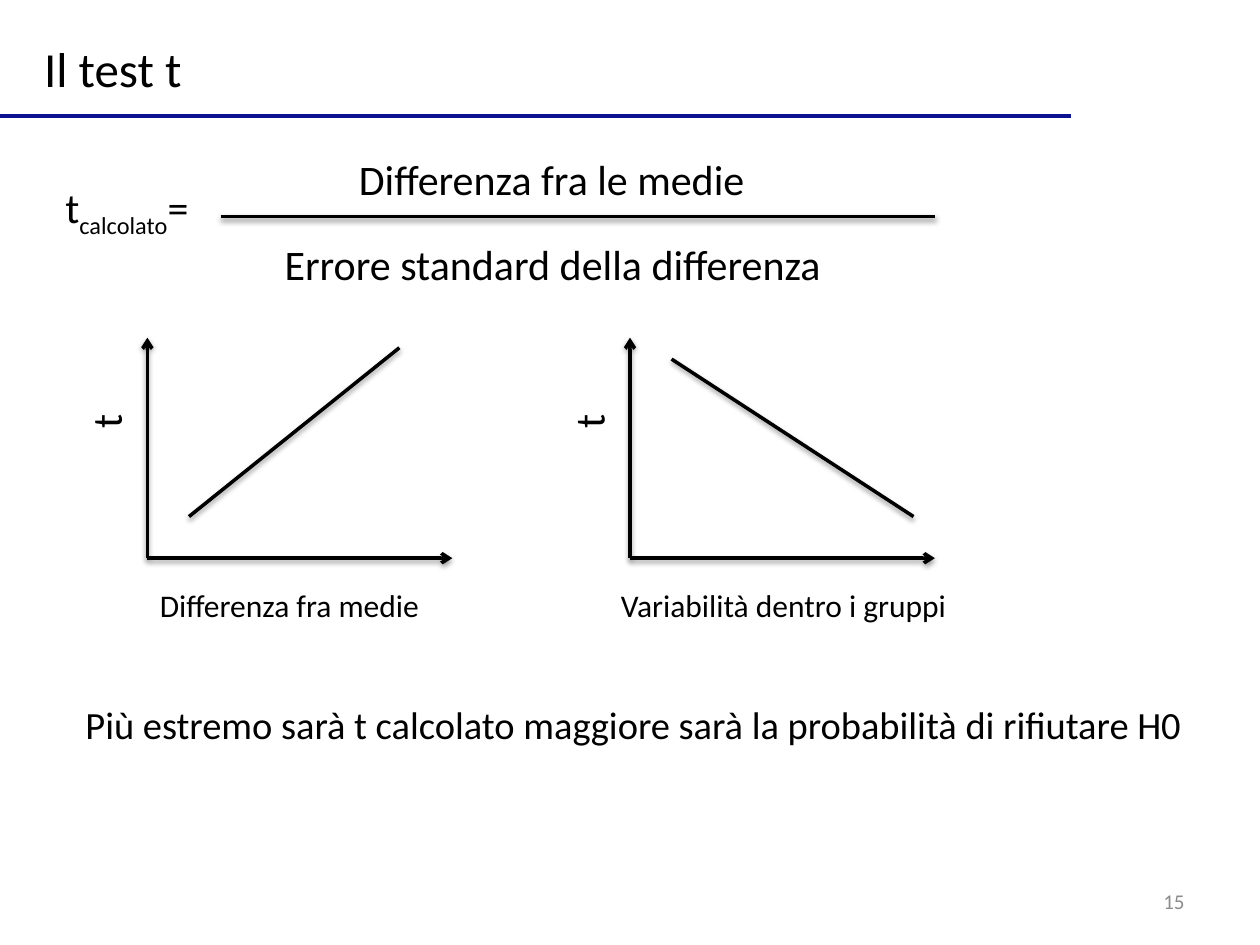
from lxml import etree
from pptx import Presentation
from pptx.dml.color import RGBColor
from pptx.enum import shapes, text
from pptx.oxml import ns
from pptx.util import Inches, Pt

COLORS = {"ink": "000000", "rule": "0C1290", "number": "8C8C8C"}
FONT = "Calibri"


def style_text(shape, size, color="ink", align=text.PP_ALIGN.LEFT, wrap=False):
    frame = shape.text_frame
    frame.word_wrap = wrap
    frame.auto_size = text.MSO_AUTO_SIZE.NONE
    frame.vertical_anchor = text.MSO_ANCHOR.MIDDLE
    paragraph = frame.paragraphs[0]
    paragraph.alignment = align
    paragraph.font.name = FONT
    paragraph.font.size = Pt(size)
    paragraph.font.color.rgb = RGBColor.from_string(COLORS[color])


def add_label(slide, box, words, size, **style):
    shape = slide.shapes.add_textbox(*map(Inches, box))
    shape.text_frame.text = words
    style_text(shape, size, **style)
    return shape


def add_line(slide, start, end, color="ink", arrow=False, shadow=True):
    line = slide.shapes.add_connector(
        shapes.MSO_CONNECTOR.STRAIGHT, *map(Inches, (*start, *end)))
    line.line.width = Pt(2)
    line.line.color.rgb = RGBColor.from_string(COLORS[color])
    if arrow:
        etree.SubElement(line.line._get_or_add_ln(), ns.qn("a:tailEnd"), type="arrow")
    effects = etree.SubElement(line._element.spPr, ns.qn("a:effectLst"))
    if shadow:
        outer = etree.SubElement(
            effects, ns.qn("a:outerShdw"), blurRad=str(Pt(3.1)), dist=str(Pt(1.6)),
            dir="5400000", rotWithShape="0")
        shade = etree.SubElement(outer, ns.qn("a:srgbClr"), val=COLORS["ink"])
        etree.SubElement(shade, ns.qn("a:alpha"), val="38000")


def add_header(slide, left, top, width, height):
    title = slide.shapes.title
    title.left, title.top = Inches(left), Inches(top)
    title.width, title.height = Inches(width), Inches(height)
    title.text_frame.text = "Il test t"
    style_text(title, 28)
    add_line(slide, (0, 0.92), (8.5, 0.92), color="rule", shadow=False)


def add_formula(slide, left, top, width):
    bar_left, bar_top = left + 1.33, top + 0.55
    add_label(slide, (left + 2.33, top, 3.3, 0.5), "Differenza fra le medie", 24)
    add_label(slide, (left + 1.74, top + 0.67, 4.51, 0.5),
              "Errore standard della differenza", 24)
    add_line(slide, (bar_left, bar_top), (left + width, bar_top))
    symbol = add_label(slide, (left, top + 0.25, 1.29, 0.5), "t", 24)
    paragraph = symbol.text_frame.paragraphs[0]
    subscript = paragraph.add_run()
    subscript.text = "calcolato"
    subscript._r.get_or_add_rPr().set("baseline", "-25000")
    paragraph.add_run().text = "="


def add_graph(slide, left, top, width, height, caption, caption_shift,
              caption_width, trend):
    bottom = top + height
    origin = (left, bottom)
    add_line(slide, origin, (left, top), arrow=True)
    add_line(slide, origin, (left + width, bottom), arrow=True)
    add_label(slide, (left + caption_shift, bottom + 0.17, caption_width, 0.4),
              caption, 18, wrap=True)
    axis_name = add_label(slide, (left - 0.67, top + 0.41, 0.67, 0.5), "t", 24,
                          align=text.PP_ALIGN.CENTER, wrap=True)
    axis_name.rotation = 270
    start, end = ((left + x, top + y) for x, y in trend)
    add_line(slide, start, end)


def add_closing(slide, left, top, width, height):
    add_label(slide, (left, top, width, height),
              "Più estremo sarà t calcolato maggiore sarà la probabilità di rifiutare H0", 22)
    add_label(slide, (7.17, 6.95, 2.33, 0.4), "15", 12, color="number",
              align=text.PP_ALIGN.RIGHT)


def main():
    presentation = Presentation()
    presentation.slide_width, presentation.slide_height = Inches(10), Inches(7.5)
    slide = presentation.slides.add_slide(presentation.slide_layouts[5])
    add_header(slide, 0.25, 0.25, 1.3, 0.57)
    add_formula(slide, 0.42, 1.17, 7)
    graphs = [
        (1.17, "Differenza fra medie", 0, 2.75, ((0.33, 1.42), (2, 0.08))),
        (5, "Variabilità dentro i gruppi", -0.17, 3.25, ((0.33, 0.17), (2.25, 1.42))),
    ]
    for left, *details in graphs:
        add_graph(slide, left, 2.68, 2.42, 1.75, *details)
    add_closing(slide, 0.58, 5.51, 8.99, 0.47)
    presentation.save("out.pptx")


if __name__ == "__main__":
    main()
